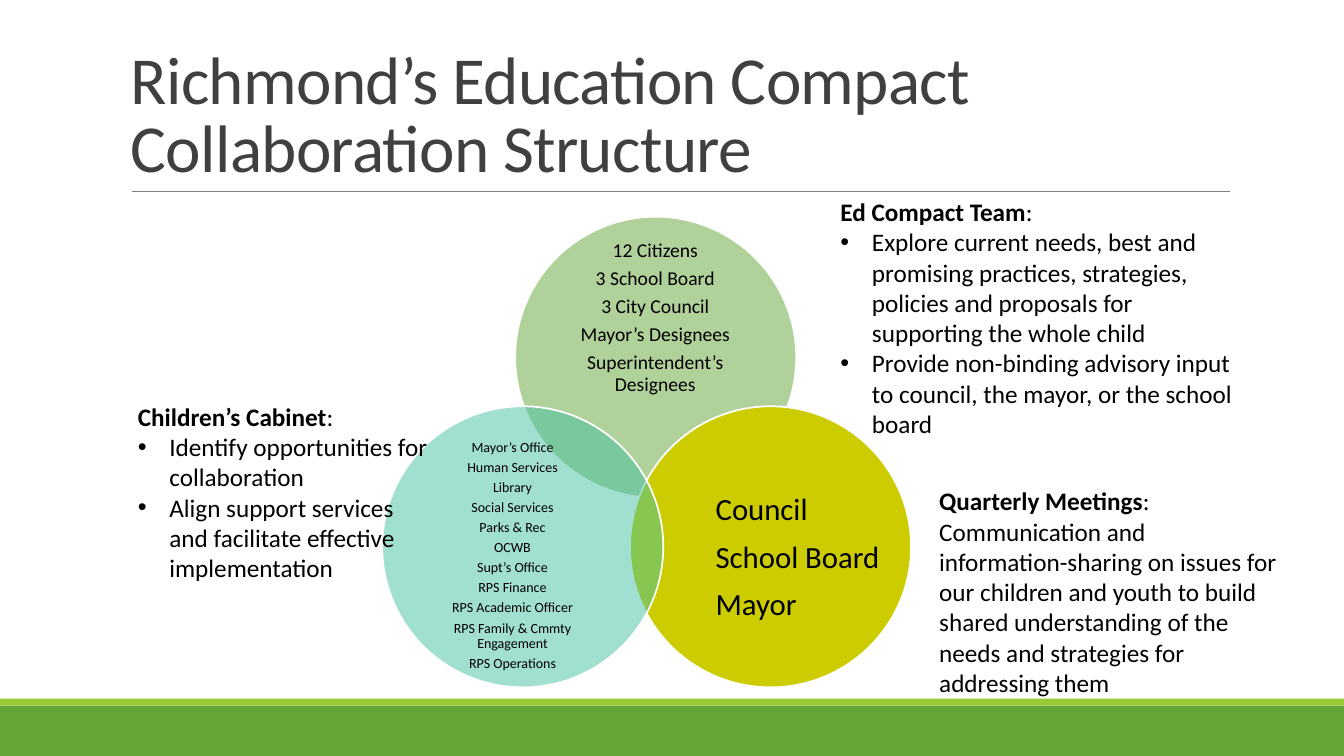
import pptx
import pptx.util
import pptx.dml.color
import pptx.enum.shapes
import pptx.enum.text
import pptx.oxml
import pptx.oxml.ns
import lxml.etree

Pt = pptx.util.Pt
ALIGN = pptx.enum.text.PP_ALIGN
ANCHOR = pptx.enum.text.MSO_ANCHOR
SHAPES = pptx.enum.shapes.MSO_SHAPE
qn = pptx.oxml.ns.qn

FONT = "Calibri"
BLACK = "000000"
WHITE = "FFFFFF"
GREEN = "63A537"
INDENT = 22.5
DIAMETER = 200.8


def color(hex_value):
    return pptx.dml.color.RGBColor.from_string(hex_value)


def add_panel(slide, kind, box, fill, alpha=None, outline=None):
    panel = slide.shapes.add_shape(kind, *(Pt(v) for v in box))
    panel.shadow.inherit = False
    panel.fill.solid()
    panel.fill.fore_color.rgb = color(fill)
    if alpha is not None:
        tint = panel.fill._xPr.find(qn("a:solidFill"))[0]
        lxml.etree.SubElement(tint, qn("a:alpha"), val=str(alpha * 1000))
    if outline:
        panel.line.color.rgb = color(outline)
        panel.line.width = Pt(1.25)
    else:
        panel.line.fill.background()


def add_text(slide, box, paragraphs, size=18, ink=BLACK, align=ALIGN.LEFT,
             anchor=ANCHOR.TOP, insets=(7.2, 3.6, 7.2, 3.6), line_spacing=1.0,
             space_after=0, tracking=None, heading=False, bullets=False):
    """Add a text box; a heading is a bold first paragraph ending in a colon."""
    frame = slide.shapes.add_textbox(*(Pt(v) for v in box)).text_frame
    frame.word_wrap = True
    frame.vertical_anchor = anchor
    frame.margin_left, frame.margin_top, frame.margin_right, frame.margin_bottom = (
        Pt(v) for v in insets)
    for index, words in enumerate(paragraphs):
        paragraph = frame.paragraphs[0] if index == 0 else frame.add_paragraph()
        paragraph.alignment = align
        paragraph.line_spacing = line_spacing
        paragraph.space_after = Pt(space_after)
        if heading and index == 0:
            paragraph.add_run().text = words
            paragraph.add_run().text = ":"
            paragraph.runs[0].font.bold = True
        else:
            paragraph.text = words
            if bullets:
                add_bullet(paragraph)
        for run in paragraph.runs:
            run.font.name = FONT
            run.font.size = Pt(size)
            run.font.color.rgb = color(ink)
            if tracking is not None:
                run.font._element.set("spc", str(int(tracking * 100)))


def add_bullet(paragraph):
    properties = paragraph._p.get_or_add_pPr()
    properties.set("marL", str(Pt(INDENT)))
    properties.set("indent", str(-Pt(INDENT)))
    lxml.etree.SubElement(properties, qn("a:buFont"), typeface="Arial")
    lxml.etree.SubElement(properties, qn("a:buChar"), char="•")


def add_footer_bands(slide, left, top, width, height):
    stripe = 5
    add_panel(slide, SHAPES.RECTANGLE, (left, top + stripe, width, height - stripe), GREEN)
    add_panel(slide, SHAPES.RECTANGLE, (left, top, width, stripe), "99CB38")


def add_title(slide, left, top, width, height):
    bottom = top + height
    rule = slide.shapes.add_connector(
        pptx.enum.shapes.MSO_CONNECTOR.STRAIGHT,
        Pt(left + 8), Pt(bottom), Pt(left + width), Pt(bottom))
    rule.line.color.rgb = color("808080")
    rule.line.width = Pt(0.5)
    lxml.etree.SubElement(rule._element.spPr, qn("a:effectLst"))
    add_text(slide, (left, top, width, height),
             ["Richmond’s Education Compact\vCollaboration Structure"],
             size=48, ink="404040", anchor=ANCHOR.BOTTOM, line_spacing=0.85, tracking=-0.5)


def add_venn(slide, left, top):
    lower = 135.4
    # Each circle: offset, fill, opacity, members, text box offset and size, format
    circles = [
        ((95, 0), GREEN, 50,
         ["12 Citizens", "3 School Board", "3 City Council", "Mayor’s Designees",
          "Superintendent’s Designees"],
         (121.6, 27.3, 147, 90),
         dict(size=14, align=ALIGN.CENTER, line_spacing=0.9)),
        ((177, lower), "CCCC00", None,
         ["Council", "School Board", "Mayor"],
         (238.2, 187.2, 120.2, 110.2),
         dict(size=22)),
        ((0, lower), "44C1A3", 50,
         ["Mayor’s Office", "Human Services", "Library", "Social Services", "Parks & Rec",
          "OCWB", "Supt’s Office", "RPS Finance", "RPS Academic Officer",
          "RPS Family & Cmmty Engagement", "RPS Operations"],
         (18.6, 187.2, 120.2, 110.2),
         dict(size=10, align=ALIGN.CENTER, line_spacing=0.9, insets=(28.8, 0, 0, 0))),
    ]
    for (dx, dy), fill, alpha, members, (tx, ty, tw, th), style in circles:
        add_panel(slide, SHAPES.OVAL, (left + dx, top + dy, DIAMETER, DIAMETER),
                  fill, alpha, WHITE)
        style = dict(insets=(0, 0, 0, 0)) | style
        add_text(slide, (left + tx, top + ty, tw, th), members, anchor=ANCHOR.MIDDLE,
                 space_after=0.35 * style["size"], **style)


def add_role(slide, box, name, duties, bullets=True):
    add_text(slide, box, [name, *duties], heading=True, bullets=bullets)


def main():
    deck = pptx.Presentation()
    deck.slide_width, deck.slide_height = Pt(960), Pt(540)
    slide = deck.slides.add_slide(deck.slide_layouts[6])

    # Frame and title
    add_footer_bands(slide, 0, 499, 960, 41)
    add_title(slide, 86.4, 22.3, 792, 114.5)

    # Overlapping groups
    add_venn(slide, 273, 154.8)

    # Role of each group
    add_role(slide, (91.4, 283, 226, 160), "Children’s Cabinet",
             ["Identify opportunities for collaboration",
              "Align support services and facilitate effective implementation"])
    add_role(slide, (593.3, 136.8, 302.4, 181.4), "Ed Compact Team",
             ["Explore current needs, best and promising practices, strategies, policies "
              "and proposals for supporting the whole child",
              "Provide non-binding advisory input to council, the mayor, or the school board"])
    add_role(slide, (663.8, 343.4, 255.6, 161), "Quarterly Meetings",
             ["Communication and information-sharing on issues for our children and youth "
              "to build shared understanding of the needs and strategies for addressing them"],
             bullets=False)

    deck.save("out.pptx")


if __name__ == "__main__":
    main()
